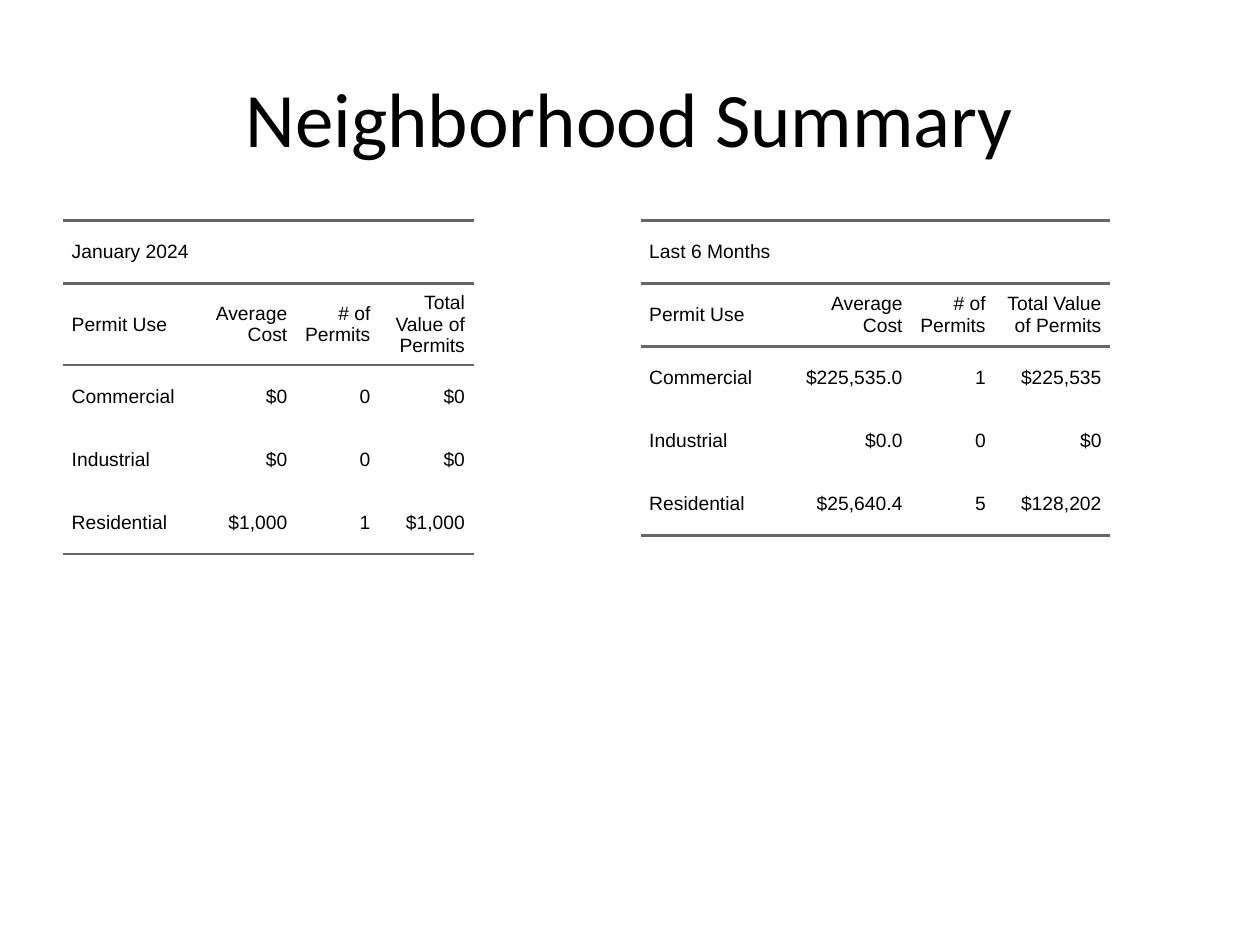
from dataclasses import dataclass

from lxml import etree
from pptx import Presentation, util as u
from pptx.dml.color import RGBColor
from pptx.enum import text
from pptx.oxml.ns import qn

BLACK = RGBColor(0x00, 0x00, 0x00)
RULE_GRAY = RGBColor(0x66, 0x66, 0x66)
PLAIN_STYLE = "{2D5ABB26-0587-4C30-8999-92F81FD0307C}"
PADDING = u.Pt(5)
ROW_HEIGHT = 36
TABLE_TOP = 126
HEADINGS = ("Permit Use", "Average Cost", "# of Permits", "Total Value of Permits")
RULES = {0: ("lnT", "lnB"), 1: ("lnT", "lnB"), 4: ("lnB",)}
CELL_FORMAT = {
    "margin_left": u.Pt(0),
    "margin_right": u.Pt(0),
    "margin_top": PADDING,
    "margin_bottom": PADDING,
    "vertical_anchor": text.MSO_ANCHOR.MIDDLE,
}
TITLE_FORMAT = {"word_wrap": True, "vertical_anchor": text.MSO_ANCHOR.MIDDLE}


@dataclass(frozen=True)
class PermitTable:
    period: str
    left: float
    widths: tuple[float, ...]
    rows: tuple[tuple[str, ...], ...]


TABLES = (
    PermitTable("January 2024", 36, (79.2, 54, 47.5, 54), (
        ("Commercial", "$0", "0", "$0"),
        ("Industrial", "$0", "0", "$0"),
        ("Residential", "$1,000", "1", "$1,000"),
    )),
    PermitTable("Last 6 Months", 366, (79.2, 75.6, 47.5, 66.2), (
        ("Commercial", "$225,535.0", "1", "$225,535"),
        ("Industrial", "$0.0", "0", "$0"),
        ("Residential", "$25,640.4", "5", "$128,202"),
    )),
)


def apply_format(target, values: dict) -> None:
    for name, value in values.items():
        setattr(target, name, value)


def write(para, words: str, font: str, size: float, align) -> None:
    para.alignment = align
    span = para.add_run()
    span.text = words
    apply_format(span.font, {"name": font, "size": u.Pt(size)})
    span.font.color.rgb = BLACK


def add_rule(cell, side: str) -> None:
    properties = cell._tc.get_or_add_tcPr()
    line = etree.SubElement(properties, qn(f"a:{side}"), w=str(u.Pt(1.5)))
    fill = etree.SubElement(line, qn("a:solidFill"))
    etree.SubElement(fill, qn("a:srgbClr"), val=str(RULE_GRAY))


def fill_cell(cell, words: str, align, rules: tuple[str, ...]) -> None:
    apply_format(cell, CELL_FORMAT)
    for side in rules:
        add_rule(cell, side)
    cell.fill.background()
    if not words:
        return
    para = cell.text_frame.paragraphs[0]
    apply_format(para, {"space_before": u.Pt(5), "space_after": u.Pt(5)})
    indents = para._p.get_or_add_pPr()
    for name in ("marL", "marR"):
        indents.set(name, str(PADDING))
    indents.set("indent", "0")
    write(para, words, "Arial", 11, align)


def add_permit_table(page, permits: PermitTable) -> None:
    rows = ((permits.period, "", "", ""), HEADINGS, *permits.rows)
    frame = page.shapes.add_table(
        len(rows), len(HEADINGS), u.Pt(permits.left), u.Pt(TABLE_TOP),
        u.Pt(sum(permits.widths)), u.Pt(ROW_HEIGHT * len(rows)))
    table = frame.table
    apply_format(table, {"first_row": False, "horz_banding": False})
    table._tbl.tblPr.find(qn("a:tableStyleId")).text = PLAIN_STYLE
    for column, width in zip(table.columns, permits.widths):
        column.width = u.Pt(width)
    table.cell(0, 0).merge(table.cell(0, len(HEADINGS) - 1))
    for r, row in enumerate(rows):
        for c, words in enumerate(row):
            align = text.PP_ALIGN.RIGHT if c else text.PP_ALIGN.LEFT
            fill_cell(table.cell(r, c), words, align, RULES.get(r, ()))


def add_title(page, words: str) -> None:
    box = page.shapes.add_textbox(u.Pt(36), u.Pt(21.6), u.Pt(648), u.Pt(90))
    apply_format(box.text_frame, TITLE_FORMAT)
    write(box.text_frame.paragraphs[0], words, "Calibri", 44, text.PP_ALIGN.CENTER)


def main() -> None:
    deck = Presentation()
    apply_format(deck, {"slide_width": u.Pt(720), "slide_height": u.Pt(540)})
    page = deck.slides.add_slide(deck.slide_layouts[6])
    for permits in TABLES:
        add_permit_table(page, permits)
    add_title(page, "Neighborhood Summary")
    deck.save("out.pptx")


if __name__ == "__main__":
    main()
